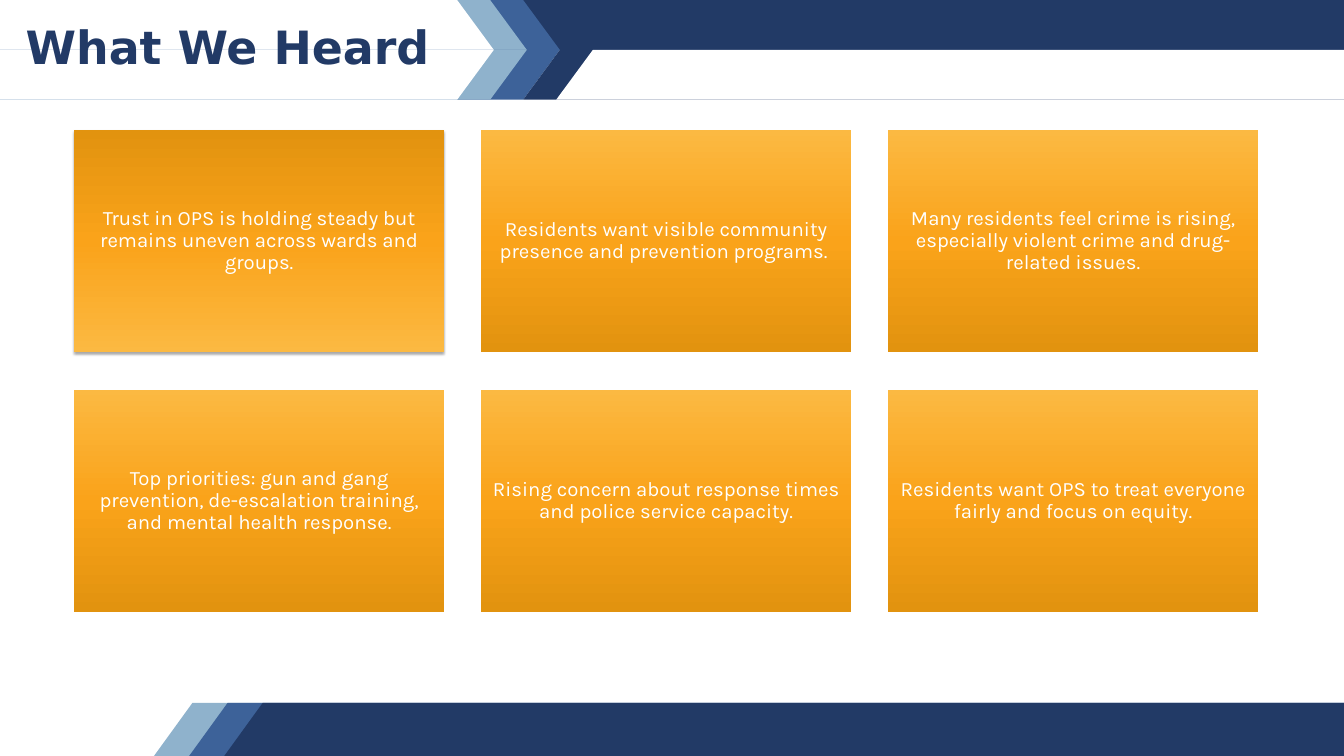
import copy

import pptx
import pptx.dml.color
import pptx.enum.shapes
import pptx.enum.text
import pptx.oxml
import pptx.oxml.ns
import pptx.util

Pt = pptx.util.Pt
WIDTH, HEIGHT = 1583.28, 890.64
NAVY, BLUE, LIGHT_BLUE, WHITE = "223A66", "3D6299", "8FB2CC", "FFFFFF"


def color(hex_value):
    return pptx.dml.color.RGBColor.from_string(hex_value)


def add_band(top, bottom, top_left, top_right, bottom_left, bottom_right, fill):
    builder = slide.shapes.build_freeform(Pt(top_left), Pt(top))
    builder.add_line_segments([(Pt(top_right), Pt(top)), (Pt(bottom_right), Pt(bottom)),
                               (Pt(bottom_left), Pt(bottom))], close=True)
    shape = builder.convert_to_shape()
    shape.fill.solid()
    shape.fill.fore_color.rgb = color(fill)
    shape.line.fill.background()
    shape.shadow.inherit = False


presentation = pptx.Presentation()
presentation.slide_width = Pt(WIDTH)
presentation.slide_height = Pt(HEIGHT)
slide = presentation.slides.add_slide(presentation.slide_layouts[5])

# Footer: stacked slanted bands reaching the right edge
for index, fill in enumerate([LIGHT_BLUE, BLUE, NAVY]):
    left = 181.4 + index * 41.4
    add_band(828, HEIGHT, left + 45.4, WIDTH, left, WIDTH, fill)

# Header: stacked bands whose slanted ends form chevrons, upper half then lower half
middle, bottom, slant, step = 58.8, 117.5, 43.2, 38.9
chevron_tips = [(659.5 - index * step, fill)
                for index, fill in enumerate([BLUE, LIGHT_BLUE, WHITE])]
add_band(0, middle, 375.8, WIDTH, 418.3, WIDTH, NAVY)
for tip, fill in chevron_tips:
    add_band(0, middle, 0, tip - slant, 0, tip, fill)
for tip, fill in chevron_tips:
    add_band(middle, bottom, 0, tip, 0, tip - slant, fill)
for left, fill in [(659.5, NAVY), (659.5 + step, WHITE)]:
    add_band(middle, bottom, left, WIDTH, left - slant, WIDTH, fill)

title = slide.shapes.title
title.left, title.top, title.width, title.height = Pt(23), Pt(19.4), Pt(517), Pt(79.2)
title.text_frame.text = "What We Heard"
title.text_frame.vertical_anchor = pptx.enum.text.MSO_ANCHOR.MIDDLE
title.text_frame.auto_size = pptx.enum.text.MSO_AUTO_SIZE.NONE
title_paragraph = title.text_frame.paragraphs[0]
title_paragraph.alignment = pptx.enum.text.PP_ALIGN.LEFT
title_paragraph.line_spacing = 0.9
title_font = title_paragraph.runs[0].font
title_font.name, title_font.size, title_font.bold = "DejaVu Sans", Pt(54), True
title_font.color.rgb = color(NAVY)
# The title stays in front of the header bands
slide.shapes.element.append(title.element)

findings = [
    "Trust in OPS is holding steady but remains uneven across wards and groups.",
    "Residents want visible community presence and prevention programs. ",
    "Many residents feel crime is rising, especially violent crime and drug-related issues.",
    "Top priorities: gun and gang prevention, de-escalation training, and mental health response.",
    "Rising concern about response times and police service capacity.",
    "Residents want OPS to treat everyone fairly and focus on equity.",
]
gradient_colors = [(0, "FBB942"), (0.5, "FAA31A"), (1, "E2930F")]
for index, finding in enumerate(findings):
    row, column = divmod(index, 3)
    card = slide.shapes.add_shape(
        pptx.enum.shapes.MSO_SHAPE.RECTANGLE,
        Pt(87.1 + column * 479.5), Pt(153.4 + row * 305.6), Pt(436.3), Pt(261.7))
    card.line.fill.background()
    card.shadow.inherit = False

    card.fill.gradient()
    card.fill.gradient_angle = 90 if index == 0 else 270
    stop_list = card.element.spPr.find(".//" + pptx.oxml.ns.qn("a:gsLst"))
    stop_list.append(copy.deepcopy(stop_list[0]))
    for stop, (position, hex_value) in zip(card.fill.gradient_stops, gradient_colors):
        stop.position = position
        stop.color.rgb = color(hex_value)

    if index == 0:
        effects = card.element.spPr.find(pptx.oxml.ns.qn("a:effectLst"))
        effects.append(pptx.oxml.parse_xml(
            f'<a:outerShdw {pptx.oxml.ns.nsdecls("a")} blurRad="{Pt(3.1)}" '
            f'dist="{Pt(1.8)}" dir="5400000" rotWithShape="0">'
            '<a:srgbClr val="000000"><a:alpha val="35000"/></a:srgbClr></a:outerShdw>'))

    frame = card.text_frame
    frame.text = finding
    frame.word_wrap = True
    frame.vertical_anchor = pptx.enum.text.MSO_ANCHOR.MIDDLE
    frame.margin_left = frame.margin_right = Pt(7.2)
    frame.margin_top = frame.margin_bottom = Pt(7.2)
    paragraph = frame.paragraphs[0]
    paragraph.alignment = pptx.enum.text.PP_ALIGN.CENTER
    paragraph.line_spacing = 0.9
    font = paragraph.runs[0].font
    font.name, font.size = "Karla", Pt(24)
    font.color.rgb = color(WHITE)

presentation.save("out.pptx")
